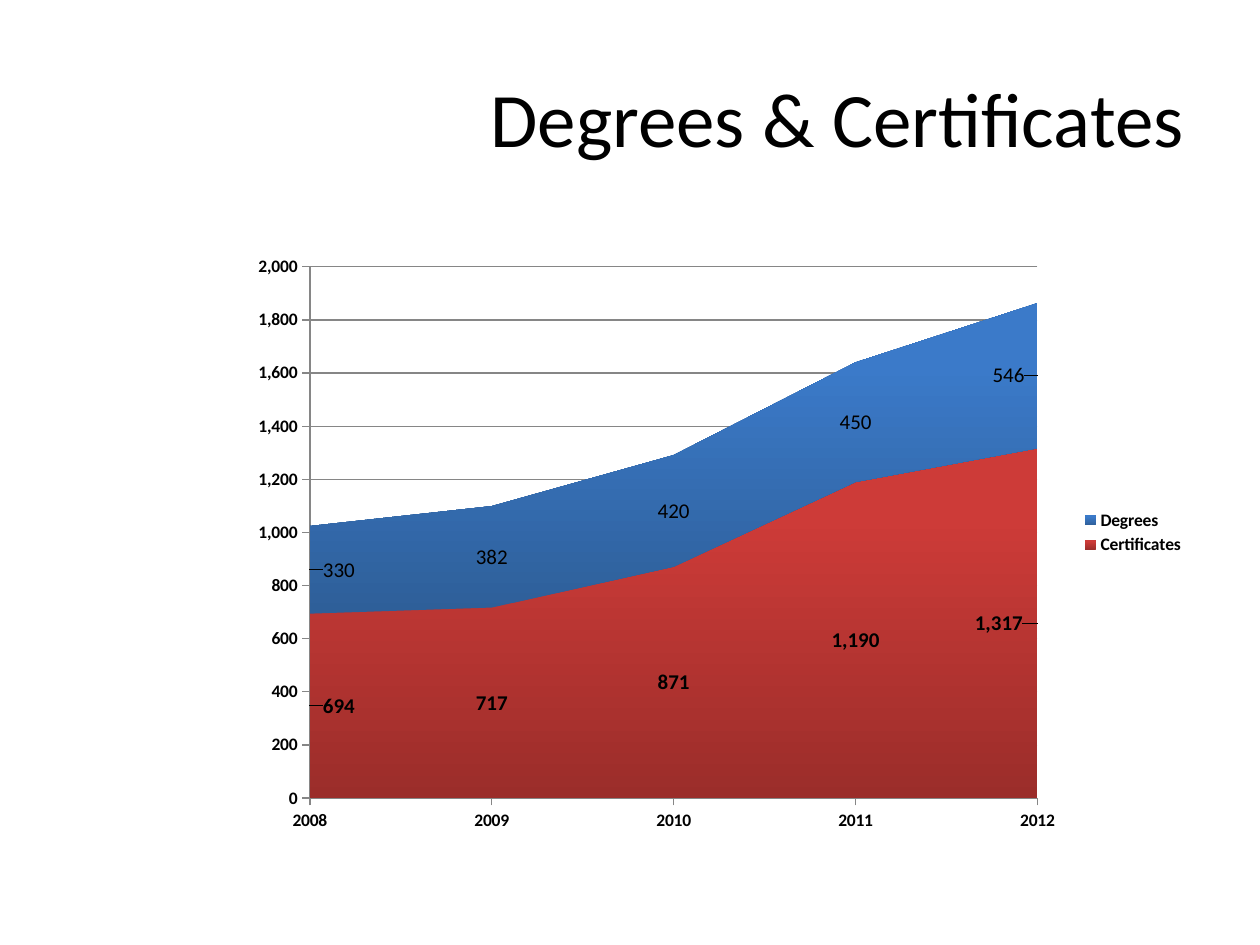
from lxml import etree
from pptx import Presentation, util as u
from pptx.chart.data import CategoryChartData
from pptx.dml.color import RGBColor
from pptx.enum import chart as ch, text
from pptx.oxml.ns import qn

BLACK = RGBColor(0x00, 0x00, 0x00)
GRAY = RGBColor(0x86, 0x86, 0x86)
DARK_RED, RED = RGBColor(0x9B, 0x2D, 0x2A), RGBColor(0xCD, 0x3B, 0x38)
DARK_BLUE, BLUE = RGBColor(0x2E, 0x5F, 0x99), RGBColor(0x3B, 0x7A, 0xC9)
FONT = "Calibri"


def add_layout(parent, position, **values):
    for old in parent.findall(qn("c:layout")):
        parent.remove(old)
    layout = etree.Element(qn("c:layout"))
    manual = etree.SubElement(layout, qn("c:manualLayout"))
    for tag, value in values.items():
        etree.SubElement(manual, qn("c:" + tag)).set("val", str(value))
    parent.insert(position, layout)


prs = Presentation()
prs.slide_width, prs.slide_height = u.Cm(25.4), u.Cm(19.05)
slide = prs.slides.add_slide(prs.slide_layouts[5])

left, width = u.Cm(4.65), u.Cm(19.48)
title = slide.shapes.title
title.left, title.top, title.width, title.height = left, u.Cm(0.76), width, u.Cm(3.18)
title.text_frame.text = "Degrees & Certificates"
title.text_frame.vertical_anchor = text.MSO_ANCHOR.MIDDLE
heading = title.text_frame.paragraphs[0]
heading.alignment = text.PP_ALIGN.RIGHT
heading.runs[0].font.size = u.Pt(44)
heading.runs[0].font.name = FONT
heading.runs[0].font.color.rgb = BLACK

awards = CategoryChartData(number_format="#,##0")
awards.categories = ["2008", "2009", "2010", "2011", "2012"]
awards.add_series("Certificates", [694, 717, 871, 1190, 1317])
awards.add_series("Degrees", [330, 382, 420, 450, 546])
chart = slide.shapes.add_chart(
    ch.XL_CHART_TYPE.AREA_STACKED, left, u.Cm(4.45), width, u.Cm(12.57), awards
).chart
chart.has_title = False
chart.font.size = u.Pt(10)
chart.font.name = FONT
chart.font.color.rgb = BLACK
add_layout(chart.plots[0]._element.getparent(), 0, layoutTarget="inner", xMode="edge",
           yMode="edge", x=0.082, y=0.074, w=0.753, h=0.852)

chart.has_legend = True
chart.legend.position = ch.XL_LEGEND_POSITION.RIGHT
chart.legend.include_in_layout = False
chart.legend.font.bold = True

years, counts = chart.category_axis, chart.value_axis
for axis in (years, counts):
    axis.major_tick_mark = ch.XL_TICK_MARK.OUTSIDE
    axis.minor_tick_mark = ch.XL_TICK_MARK.NONE
    axis.tick_labels.font.bold = True
    axis.format.line.color.rgb = GRAY
years.has_major_gridlines = False
counts.has_major_gridlines = True
counts.major_gridlines.format.line.color.rgb = GRAY
counts.minimum_scale, counts.maximum_scale, counts.major_unit = 0, 2000, 200
counts.tick_labels.number_format = "#,##0"
counts.tick_labels.number_format_is_linked = False

looks = [(DARK_RED, RED, True, -0.04), (DARK_BLUE, BLUE, False, -0.03)]
for series, (dark, light, bold, last_shift) in zip(chart.plots[0].series, looks):
    fill = series.format.fill
    fill.gradient()
    fill.gradient_angle = 90
    for stop, color, position in zip(fill.gradient_stops, (dark, light), (0, 0.8)):
        stop.color.rgb = color
        stop.position = position

    labels = series.data_labels
    labels.show_value = True
    end_labels = [series.points[index].data_label for index in (0, 4)]
    for font in [labels.font] + [label.font for label in end_labels]:
        font.size = u.Pt(12)
        font.bold = bold
        font.name = FONT
        font.color.rgb = BLACK
    for label, shift in zip(labels._element.findall(qn("c:dLbl")), (0.03, last_shift)):
        add_layout(label, 1, x=shift, y=0)

prs.save("out.pptx")
